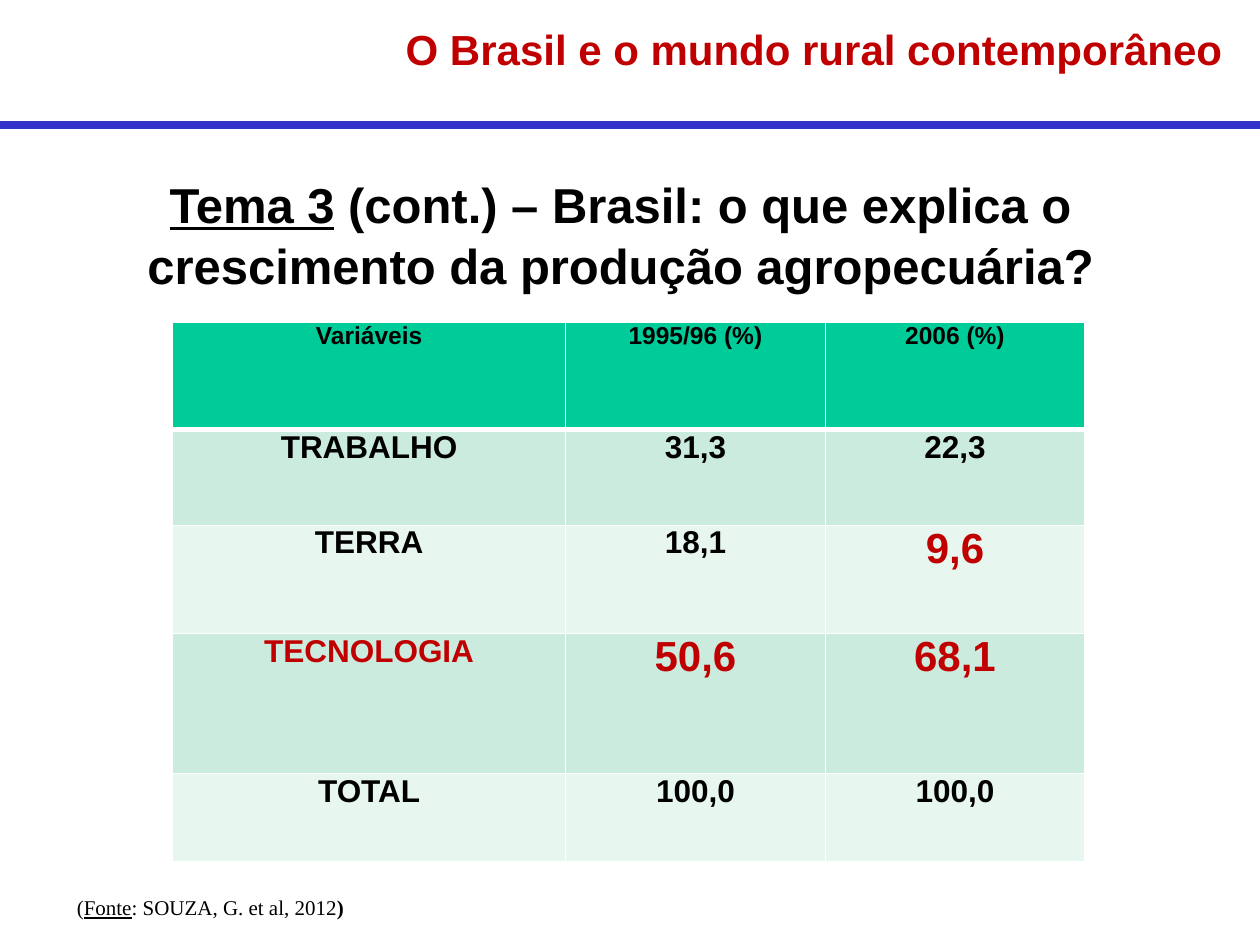
from dataclasses import dataclass

from lxml import etree
from pptx import Presentation
from pptx.dml.color import RGBColor
from pptx.enum.shapes import MSO_CONNECTOR
from pptx.enum.text import MSO_ANCHOR, MSO_AUTO_SIZE, PP_ALIGN
from pptx.oxml.ns import qn
from pptx.util import Inches, Pt

LEFT, CENTER = PP_ALIGN.LEFT, PP_ALIGN.CENTER
TOP, MIDDLE = MSO_ANCHOR.TOP, MSO_ANCHOR.MIDDLE
NO_FIT = MSO_AUTO_SIZE.NONE
STRAIGHT = MSO_CONNECTOR.STRAIGHT
TITLE_ONLY = 5


@dataclass(frozen=True)
class Theme:
    sans: str = "Arial"
    serif: str = "Times New Roman"
    ink: str = "000000"
    accent: str = "C00000"
    rule: str = "3333CC"
    border: str = "FFFFFF"
    header: str = "00CC99"
    bands: tuple = ("CAEBDE", "E7F6EE")
    heading_size: int = 28
    large_size: int = 24
    body_size: int = 18
    header_size: int = 14
    source_size: int = 12


def write(para, text, font, size, color, bold=False, underline=False):
    span = para.add_run()
    span.text = text
    span.font.name = font
    span.font.size = Pt(size)
    span.font.color.rgb = RGBColor.from_string(color)
    span.font.bold = bold
    span.font.underline = underline


class SlideBuilder:
    def __init__(self, slide, theme):
        self.slide = slide
        self.theme = theme

    def prepare(self, box, area, anchor):
        box.left, box.top, box.width, box.height = map(Inches, area)
        frame = box.text_frame
        frame.margin_left = frame.margin_right = 0
        frame.margin_top = frame.margin_bottom = 0
        frame.word_wrap = True
        frame.auto_size = NO_FIT
        frame.vertical_anchor = anchor
        return frame

    def title(self, text, area, indent):
        para = self.prepare(self.slide.shapes.title, area, MIDDLE).paragraphs[0]
        para.alignment = LEFT
        properties = para._p.get_or_add_pPr()
        properties.set("marL", str(Inches(indent)))
        properties.set("indent", "0")
        write(para, text, self.theme.sans, self.theme.large_size,
              self.theme.accent, bold=True)

    def text(self, lines, area, font, size, align=LEFT, spacing=1.0):
        box = self.slide.shapes.add_textbox(*map(Inches, area))
        frame = self.prepare(box, area, TOP)
        for index, line in enumerate(lines):
            para = frame.add_paragraph() if index else frame.paragraphs[0]
            para.alignment = align
            para.line_spacing = spacing
            for content, style in line:
                write(para, content, font, size, self.theme.ink, **style)

    def rule(self, top, width, weight):
        line = self.slide.shapes.add_connector(
            STRAIGHT, 0, Inches(top), Inches(width), Inches(top))
        line.line.color.rgb = RGBColor.from_string(self.theme.rule)
        line.line.width = Pt(weight)
        etree.SubElement(line._element.spPr, qn("a:effectLst"))

    def borders(self, cell, top, bottom):
        properties = cell._tc.get_or_add_tcPr()
        weights = {"a:lnL": 1, "a:lnR": 1, "a:lnT": top, "a:lnB": bottom}
        for index, (side, weight) in enumerate(weights.items()):
            line = etree.Element(qn(side), w=str(Pt(weight)))
            fill = etree.SubElement(line, qn("a:solidFill"))
            etree.SubElement(fill, qn("a:srgbClr"), val=self.theme.border)
            properties.insert(index, line)

    def table(self, rows, left, top, widths, heights, emphasis):
        theme = self.theme
        table = self.slide.shapes.add_table(
            len(rows), len(widths), Inches(left), Inches(top),
            Inches(sum(widths)), Inches(sum(heights))).table
        for column, width in zip(table.columns, widths):
            column.width = Inches(width)
        for r, (values, height) in enumerate(zip(rows, heights)):
            table.rows[r].height = Inches(height)
            band = theme.bands[(r - 1) % 2] if r else theme.header
            base_size = theme.body_size if r else theme.header_size
            for c, value in enumerate(values):
                cell = table.cell(r, c)
                cell.margin_left = cell.margin_right = 0
                cell.margin_top = cell.margin_bottom = 0
                cell.fill.solid()
                cell.fill.fore_color.rgb = RGBColor.from_string(band)
                self.borders(cell, 3 if r == 1 else 1, 3 if r == 0 else 1)
                marked = value in emphasis
                size = theme.large_size if marked and c else base_size
                para = cell.text_frame.paragraphs[0]
                para.alignment = CENTER
                write(para, value, theme.sans, size,
                      theme.accent if marked else theme.ink, bold=True)


def main():
    deck = Presentation()
    deck.slide_width, deck.slide_height = Inches(10), Inches(7.5)
    theme = Theme()
    page = SlideBuilder(
        deck.slides.add_slide(deck.slide_layouts[TITLE_ONLY]), theme)

    page.title("O Brasil e o mundo rural contemporâneo",
               (0.26, 0.15, 9.47, 0.48), indent=2.96)
    page.rule(0.99, 10, 4.5)
    bold = {"bold": True}
    underlined = {"underline": True}
    page.text(
        [[("Tema 3", bold | underlined),
          (" (cont.) – Brasil: o que explica o", bold)],
         [("crescimento da produção agropecuária?", bold)]],
        (1.15, 1.36, 7.55, 0.94), theme.sans, theme.heading_size,
        align=CENTER, spacing=1.05)
    page.table(
        [("Variáveis", "1995/96 (%)", "2006 (%)"),
         ("TRABALHO", "31,3", "22,3"),
         ("TERRA", "18,1", "9,6"),
         ("TECNOLOGIA", "50,6", "68,1"),
         ("TOTAL", "100,0", "100,0")],
        1.37, 2.56, (3.12, 2.06, 2.06), (0.85, 0.76, 0.86, 1.11, 0.7),
        emphasis={"9,6", "TECNOLOGIA", "50,6", "68,1"})
    page.text(
        [[("(", {}), ("Fonte", underlined),
          (": SOUZA, G. et al, 2012", {}), (")", bold)]],
        (0.61, 7.1, 2.3, 0.21), theme.serif, theme.source_size)

    deck.save("out.pptx")


if __name__ == "__main__":
    main()
